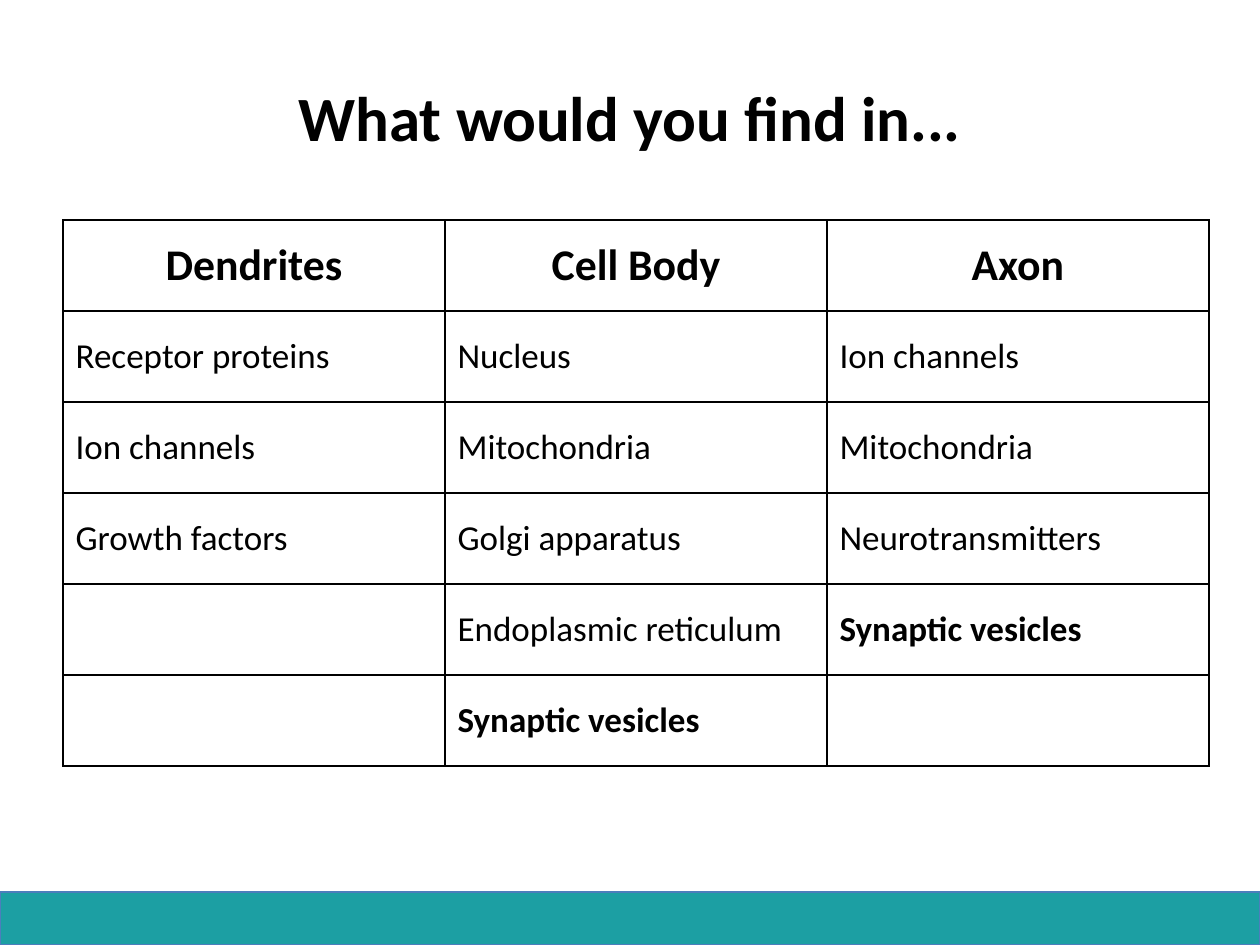
from lxml import etree
from pptx import Presentation
from pptx.dml.color import RGBColor
from pptx.enum.shapes import MSO_SHAPE
from pptx.enum.text import MSO_ANCHOR, PP_ALIGN
from pptx.oxml.ns import qn
from pptx.util import Emu, Pt

RECTANGLE = MSO_SHAPE.RECTANGLE
MIDDLE = MSO_ANCHOR.MIDDLE
LEFT, CENTER = PP_ALIGN.LEFT, PP_ALIGN.CENTER
TITLE_ONLY = 5
PX_PER_INCH = 126
SLIDE_WIDTH, SLIDE_HEIGHT = 1260, 945

HEADINGS = ["Dendrites", "Cell Body", "Axon"]
CONTENTS = [
    ["Receptor proteins", "Nucleus", "Ion channels"],
    ["Ion channels", "Mitochondria", "Mitochondria"],
    ["Growth factors", "Golgi apparatus", "Neurotransmitters"],
    ["", "Endoplasmic reticulum", "Synaptic vesicles"],
    ["", "Synaptic vesicles", ""],
]
HIGHLIGHTED = "Synaptic vesicles"


def px(length):
    return Emu(round(length * 914400 / PX_PER_INCH))


def color(hex_string):
    return RGBColor.from_string(hex_string)


class SlideBuilder:
    """Holds the style and the slide being built."""

    font = "Calibri"
    ink = "000000"
    bar_fill = "1C9FA3"
    bar_line = "4B7EBC"

    def __init__(self, slide):
        self.slide = slide

    def set_text(self, frame, text, size, bold, align):
        frame.text = text
        paragraph = frame.paragraphs[0]
        paragraph.alignment = align
        for run in paragraph.runs:
            run.font.name = self.font
            run.font.size = Pt(size)
            run.font.bold = bold
            run.font.color.rgb = color(self.ink)

    def bar(self, left, top, width, height):
        bar = self.slide.shapes.add_shape(
            RECTANGLE, px(left), px(top), px(width), px(height))
        bar.shadow.inherit = False
        bar.fill.solid()
        bar.fill.fore_color.rgb = color(self.bar_fill)
        bar.line.color.rgb = color(self.bar_line)
        bar.line.width = Pt(0.75)

    def title(self, text, left, top, width, height):
        title = self.slide.shapes.title
        title.left, title.top = px(left), px(top)
        title.width, title.height = px(width), px(height)
        title.text_frame.vertical_anchor = MIDDLE
        self.set_text(title.text_frame, text, 36, True, CENTER)

    def border(self, cell):
        properties = cell._tc.get_or_add_tcPr()
        for side in ("lnL", "lnR", "lnT", "lnB"):
            line = etree.SubElement(properties, qn(f"a:{side}"), w=str(Pt(1)))
            fill = etree.SubElement(line, qn("a:solidFill"))
            etree.SubElement(fill, qn("a:srgbClr"), val=self.ink)

    def table(self, headings, contents, left, top, column_width, row_height):
        rows = [headings] + contents
        table = self.slide.shapes.add_table(
            len(rows), len(headings), px(left), px(top),
            px(column_width * len(headings)), px(row_height * len(rows))).table
        table.first_row = table.horz_banding = False
        for row_index, row in enumerate(rows):
            is_heading = row_index == 0
            for column_index, text in enumerate(row):
                cell = table.cell(row_index, column_index)
                cell.vertical_anchor = MIDDLE
                self.border(cell)
                cell.fill.background()
                self.set_text(cell.text_frame, text,
                              25 if is_heading else 20,
                              is_heading or text == HIGHLIGHTED,
                              CENTER if is_heading else LEFT)


def main():
    presentation = Presentation()
    presentation.slide_width = px(SLIDE_WIDTH)
    presentation.slide_height = px(SLIDE_HEIGHT)
    layout = presentation.slide_layouts[TITLE_ONLY]
    builder = SlideBuilder(presentation.slides.add_slide(layout))
    builder.bar(0, 892, SLIDE_WIDTH, 53)
    builder.title("What would you find in...", 63, 38, 1134, 157)
    builder.table(HEADINGS, CONTENTS, 63, 220, 382, 91)
    presentation.save("out.pptx")


if __name__ == "__main__":
    main()
